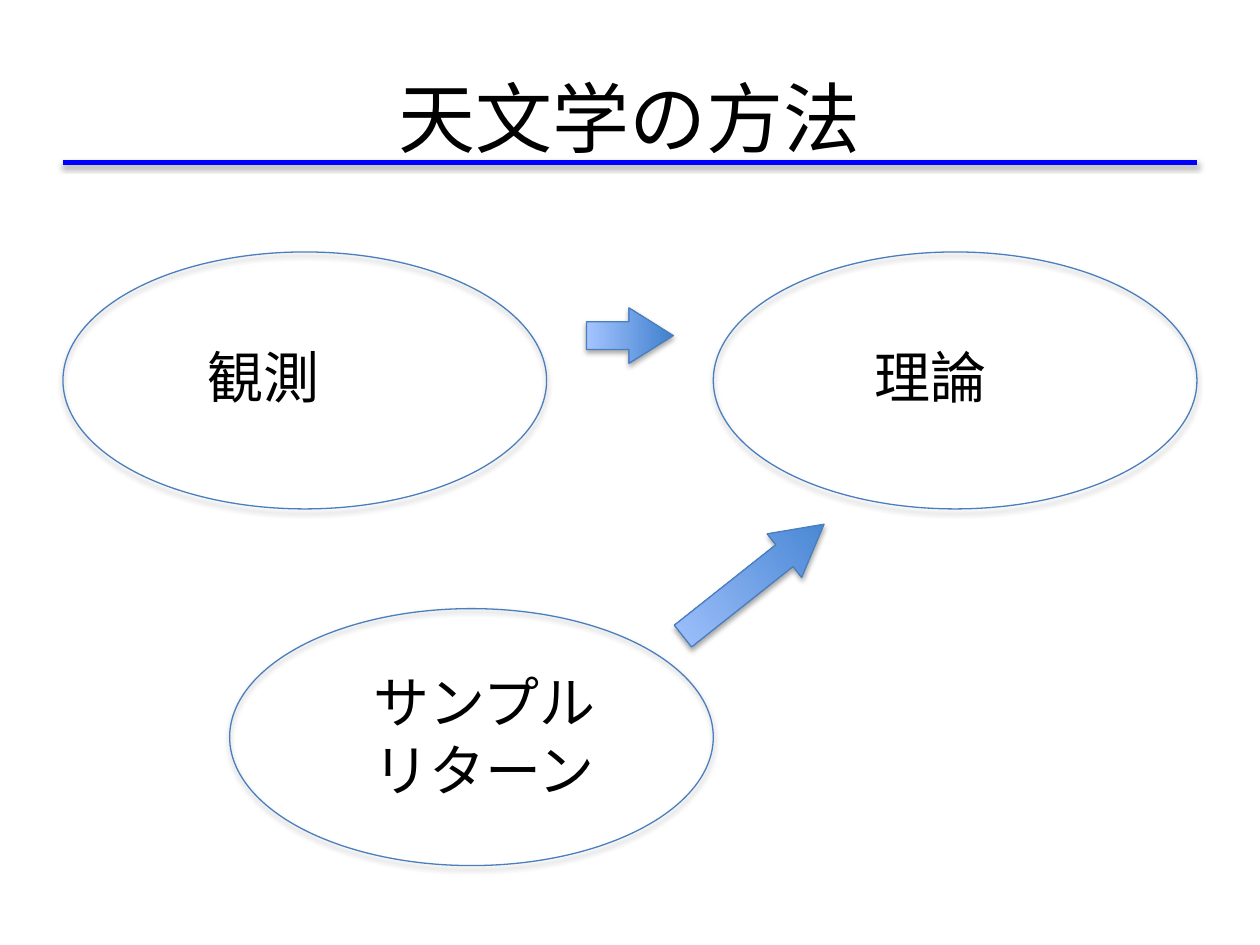
import pptx
import pptx.dml.color
import pptx.enum.shapes
import pptx.enum.text
import pptx.oxml
import pptx.oxml.ns
import pptx.util
from pptx.util import Cm, Pt

COLOURS = {"text": "000000", "rule": "0000FF", "outline": "4B7EBC",
           "arrow_head": "3F80CE", "arrow_tail": "A4C4FF", "shadow": "000000"}
FONT = "Calibri"
PAGE_WIDTH, PAGE_HEIGHT, MARGIN = 25.4, 19.05, 1.27
OVAL_WIDTH, OVAL_HEIGHT = 9.75, 5.18
UPPER_ROW, LOWER_ROW = 5.08, 12.27
RULE_TOP = 3.28
ARROW_WIDTH = 1.12

TITLE = "天文学の方法"
right_oval = PAGE_WIDTH - MARGIN - OVAL_WIDTH
# oval left and top, label box (left, top, width, height), label lines
METHODS = [
    ((MARGIN, UPPER_ROW), (3.94, 6.78, 4.27, 1.63), ["観測"]),
    ((right_oval, UPPER_ROW), (17.37, 6.78, 4.27, 1.63), ["理論"]),
    ((right_oval - OVAL_WIDTH, LOWER_ROW), (6.88, 13.34, 5.77, 3),
     ["サンプル", "リターン"]),
]
# left, top, length, rotation, head length as a share of the width
ARROWS = [(12.14, 5.89, 1.75, 270, 0.8), (14.63, 9.88, 3.63, 231.6, 0.91)]


def rgb(name):
    return pptx.dml.color.RGBColor.from_string(COLOURS[name])


def cast_shadow(shape, distance, opacity):
    """Give the shape a soft shadow falling straight down."""
    shape._element.spPr.append(pptx.oxml.parse_xml(
        f'<a:effectLst {pptx.oxml.ns.nsdecls("a")}>'
        f'<a:outerShdw blurRad="{Pt(3.1)}" dist="{Pt(distance)}" dir="5400000" '
        f'rotWithShape="0"><a:srgbClr val="{COLOURS["shadow"]}">'
        f'<a:alpha val="{opacity * 1000}"/></a:srgbClr></a:outerShdw></a:effectLst>'))


def write(frame, lines, size, alignment):
    frame.text = "\n".join(lines)
    for paragraph in frame.paragraphs:
        paragraph.alignment = alignment
        paragraph.font.name = FONT
        paragraph.font.size = Pt(size)
        paragraph.font.color.rgb = rgb("text")


def outline(shape):
    shape.line.color.rgb = rgb("outline")
    shape.line.width = Pt(0.75)
    cast_shadow(shape, 1.8, 35)


def add_rule(slide):
    rule = slide.shapes.add_connector(
        pptx.enum.shapes.MSO_CONNECTOR.STRAIGHT,
        Cm(MARGIN), Cm(RULE_TOP), Cm(PAGE_WIDTH - MARGIN), Cm(RULE_TOP))
    rule.line.color.rgb = rgb("rule")
    rule.line.width = Pt(3)
    cast_shadow(rule, 1.6, 38)
    slide.shapes.title._element.addprevious(rule._element)


def add_oval(slide, left, top):
    oval = slide.shapes.add_shape(
        pptx.enum.shapes.MSO_SHAPE.OVAL,
        Cm(left), Cm(top), Cm(OVAL_WIDTH), Cm(OVAL_HEIGHT))
    oval.fill.background()
    outline(oval)


def add_label(slide, box, lines):
    label = slide.shapes.add_textbox(*map(Cm, box)).text_frame
    label.word_wrap = True
    label.auto_size = pptx.enum.text.MSO_AUTO_SIZE.SHAPE_TO_FIT_TEXT
    align = pptx.enum.text.PP_ALIGN
    write(label, lines, 32, align.CENTER if len(lines) > 1 else align.LEFT)


def add_arrow(slide, left, top, length, rotation, head):
    arrow = slide.shapes.add_shape(
        pptx.enum.shapes.MSO_SHAPE.DOWN_ARROW,
        Cm(left), Cm(top), Cm(ARROW_WIDTH), Cm(length))
    arrow.rotation = rotation
    arrow.adjustments[0] = 0.5
    arrow.adjustments[1] = head
    arrow.fill.gradient()
    arrow.fill.gradient_angle = 90
    for stop, (position, colour) in zip(
            arrow.fill.gradient_stops, [(0, "arrow_head"), (1, "arrow_tail")]):
        stop.position = position
        stop.color.rgb = rgb(colour)
    outline(arrow)


def main():
    deck = pptx.Presentation()
    deck.slide_width, deck.slide_height = Cm(PAGE_WIDTH), Cm(PAGE_HEIGHT)
    slide = deck.slides.add_slide(deck.slide_layouts.get_by_name("Title Only"))

    title = slide.shapes.title
    title.left, title.top = Cm(MARGIN), Cm(0.76)
    title.width, title.height = Cm(PAGE_WIDTH - 2 * MARGIN), Cm(3.18)
    title.text_frame.vertical_anchor = pptx.enum.text.MSO_ANCHOR.MIDDLE
    write(title.text_frame, [TITLE], 44, pptx.enum.text.PP_ALIGN.CENTER)
    add_rule(slide)

    for corner, _, _ in METHODS:
        add_oval(slide, *corner)
    for _, box, lines in METHODS:
        add_label(slide, box, lines)
    for arrow in ARROWS:
        add_arrow(slide, *arrow)
    deck.save("out.pptx")


if __name__ == "__main__":
    main()
